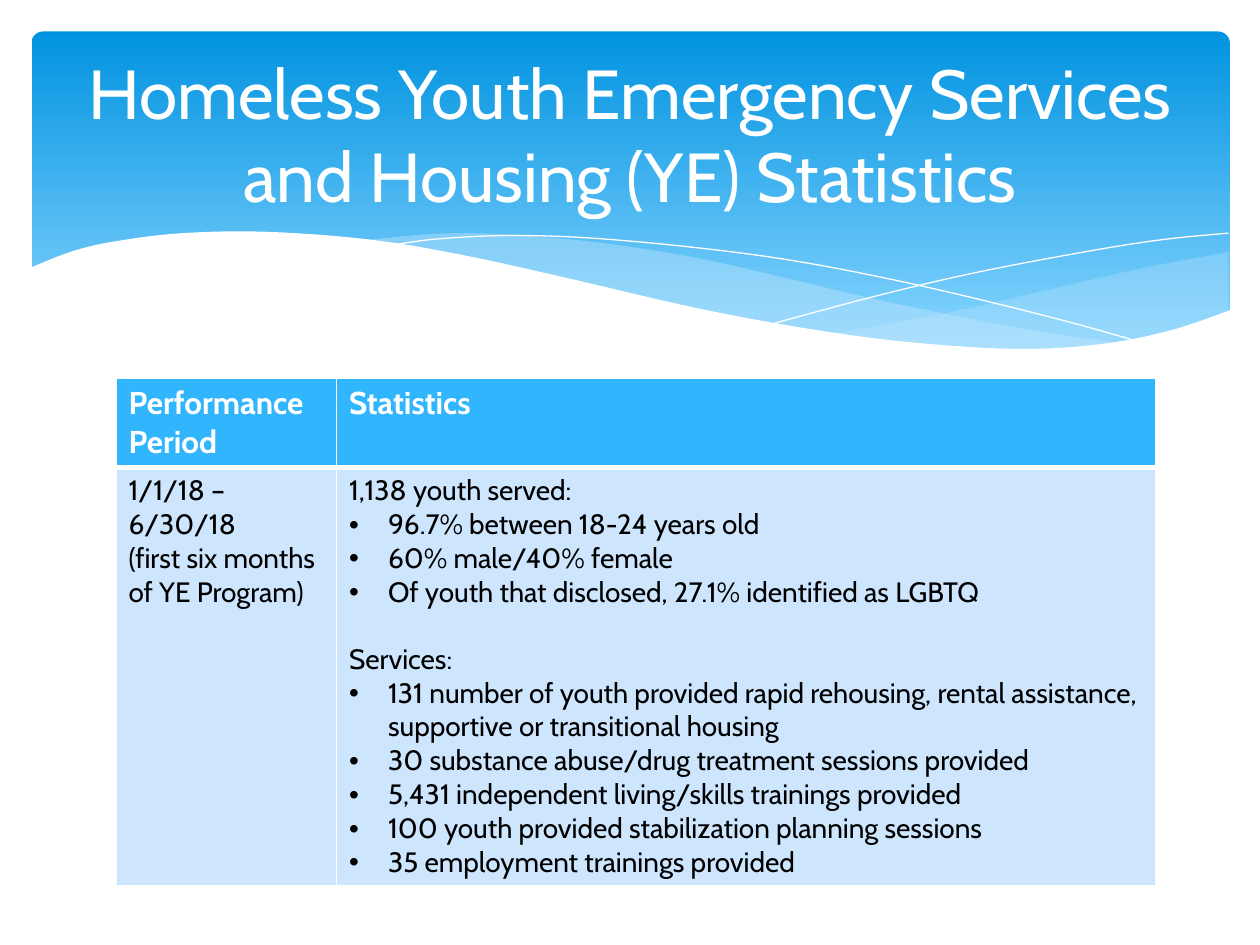
from dataclasses import dataclass

from lxml import etree
from pptx import Presentation
from pptx.dml.color import RGBColor
from pptx.enum.shapes import MSO_SHAPE
from pptx.enum.text import MSO_ANCHOR, MSO_AUTO_SIZE, PP_ALIGN
from pptx.oxml.ns import qn
from pptx.util import Pt

ROUNDED = MSO_SHAPE.ROUNDED_RECTANGLE
MIDDLE, CENTER = MSO_ANCHOR.MIDDLE, PP_ALIGN.CENTER
NO_AUTOFIT = MSO_AUTO_SIZE.NONE
PX = 9144  # EMU per px, 100 px to the inch
STEPS = 6  # straight pieces between two curve points
TITLE_ONLY = 5
FONT = "Cabin"
COLORS = {
    "white": "FFFFFF", "black": "000000", "sky_top": "0293E0", "sky_bottom": "83D3FE",
    "ripple": "C6E7FC", "header": "31B6FD", "body": "CEE5FE",
}


@dataclass
class Wave:
    """Smooth curves joined end to end; filled when it has a fill colour."""
    curves: list
    fill: str = ""
    alpha: int = 100


@dataclass
class Entry:
    text: str
    bullet: bool = False
    gap: int = 0  # points above


@dataclass
class CellStyle:
    fill: str
    color: str
    size: int
    bold: bool
    borders: dict


WAVES = [
    Wave([[(975, 200), (906, 213), (832, 230), (753, 248), (661, 265)],
          [(661, 265), (719, 271), (781, 277), (835, 277), (889, 272), (935, 262),
           (975, 247)]], "ripple", 29),
    Wave([[(893, 273), (807, 260), (706, 240), (629, 222), (569, 208), (514, 198),
           (442, 189), (361, 185), (286, 191)],
          [(286, 191), (362, 203), (449, 222), (566, 248), (665, 266), (748, 276),
           (818, 278), (893, 273)]], "ripple", 40),
    Wave([[(309, 195), (344, 190), (401, 187), (469, 189), (556, 197), (636, 208),
           (727, 226), (831, 251), (907, 272)]]),
    Wave([[(613, 257), (695, 235), (776, 216), (866, 199), (924, 190), (975, 185)]]),
    Wave([[(977, 246), (930, 262), (875, 273), (809, 277), (726, 272), (648, 262),
           (555, 245), (447, 220), (365, 202), (292, 190), (211, 184), (146, 185),
           (95, 191), (59, 199), (23, 213)],
          [(23, 329), (977, 329)]], "white"),
]

HEADER = CellStyle("header", "white", 18, True, {"L": 1, "R": 1, "T": 1, "B": 3})
BODY = CellStyle("body", "black", 16, False, {"L": 1, "R": 1, "T": 3, "B": 1})
COLUMN_WIDTHS = [175, 650]
ROW_HEIGHTS = [70, 331]
ROWS = [
    (HEADER, [[Entry("Performance Period")], [Entry("Statistics")]]),
    (BODY, [
        [Entry("1/1/18 – 6/30/18"), Entry("(first six months of YE Program)")],
        [
            Entry("1,138 youth served:"),
            Entry("96.7% between 18-24 years old", True),
            Entry("60% male/40% female", True),
            Entry("Of youth that disclosed, 27.1% identified as LGBTQ", True),
            Entry("Services:", gap=19),
            Entry("131 number of youth provided rapid rehousing, rental assistance, "
                  "supportive or transitional housing", True),
            Entry("30 substance abuse/drug treatment sessions provided", True),
            Entry("5,431 independent living/skills trainings provided", True),
            Entry("100 youth provided stabilization planning sessions", True),
            Entry("35 employment trainings provided", True),
        ],
    ]),
]


def rgb(name: str) -> RGBColor:
    return RGBColor.from_string(COLORS[name])


def smooth(points: list) -> list:
    """Catmull-Rom curve through the points, in EMU."""
    padded = [points[0], *points, points[-1]]
    result = []
    for a, b, c, d in zip(padded, padded[1:], padded[2:], padded[3:]):
        for step in range(STEPS):
            t = step / STEPS
            result.append(tuple(
                PX * (q + t * (r - p) / 2 + t**2 * (2 * p - 5 * q + 4 * r - s) / 2
                      + t**3 * (3 * q - p - 3 * r + s) / 2)
                for p, q, r, s in zip(a, b, c, d)))
    return result + [(points[-1][0] * PX, points[-1][1] * PX)]


def add_sky(page) -> None:
    sky = page.shapes.add_shape(ROUNDED, 25 * PX, 25 * PX, 951 * PX, 270 * PX)
    sky.shadow.inherit = False
    sky.adjustments[0] = 0.034
    sky.line.fill.background()
    sky.fill.gradient()
    sky.fill.gradient_angle = 270
    stops = zip(sky.fill.gradient_stops, [("sky_top", 0), ("sky_bottom", 0.9)])
    for stop, (color, position) in stops:
        stop.color.rgb = rgb(color)
        stop.position = position


def add_wave(page, wave: Wave) -> None:
    points = [point for curve in wave.curves for point in smooth(curve)]
    builder = page.shapes.build_freeform(*points[0], scale=1.0)
    builder.add_line_segments(points[1:], close=bool(wave.fill))
    shape = builder.convert_to_shape()
    shape.shadow.inherit = False
    if not wave.fill:
        shape.fill.background()
        shape.line.color.rgb = rgb("white")
        shape.line.width = Pt(0)
        return
    shape.line.fill.background()
    shape.fill.solid()
    shape.fill.fore_color.rgb = rgb(wave.fill)
    if wave.alpha < 100:
        color = shape.element.spPr.find(f"{qn('a:solidFill')}/{qn('a:srgbClr')}")
        etree.SubElement(color, qn("a:alpha"), val=str(wave.alpha * 1000))


def add_bullet(para) -> None:
    properties = para._p.get_or_add_pPr()
    properties.set("marL", str(31 * PX))
    properties.set("indent", str(-31 * PX))
    etree.SubElement(properties, qn("a:buFont"), typeface="Arial")
    etree.SubElement(properties, qn("a:buChar"), char="•")


def fill_cell(cell, entries: list, style: CellStyle) -> None:
    properties = cell._tc.get_or_add_tcPr()
    for side, width in style.borders.items():
        line = etree.SubElement(properties, qn(f"a:ln{side}"), w=str(Pt(width)))
        solid = etree.SubElement(line, qn("a:solidFill"))
        etree.SubElement(solid, qn("a:srgbClr"), val=COLORS["white"])
    cell.fill.solid()
    cell.fill.fore_color.rgb = rgb(style.fill)
    frame = cell.text_frame
    for index, entry in enumerate(entries):
        para = frame.add_paragraph() if index else frame.paragraphs[0]
        para.text = entry.text
        if entry.gap:
            para.space_before = Pt(entry.gap)
        if entry.bullet:
            add_bullet(para)
        para.font.name, para.font.size = FONT, Pt(style.size)
        para.font.bold = style.bold
        para.font.color.rgb = rgb(style.color)


def add_statistics(page) -> None:
    table = page.shapes.add_table(
        len(ROWS), len(COLUMN_WIDTHS), 92 * PX, 300 * PX,
        sum(COLUMN_WIDTHS) * PX, sum(ROW_HEIGHTS) * PX).table
    for column, width in zip(table.columns, COLUMN_WIDTHS):
        column.width = width * PX
    for row, height, (style, cells) in zip(table.rows, ROW_HEIGHTS, ROWS):
        row.height = height * PX
        for cell, entries in zip(row.cells, cells):
            fill_cell(cell, entries, style)


def set_title(page, text: str) -> None:
    title = page.shapes.title
    title.left, title.top, title.width, title.height = (
        50 * PX, 37 * PX, 900 * PX, 137 * PX)
    frame = title.text_frame
    frame.word_wrap, frame.auto_size = True, NO_AUTOFIT
    frame.vertical_anchor = MIDDLE
    para = frame.paragraphs[0]
    para.text, para.alignment = text, CENTER
    para.font.name, para.font.size = FONT, Pt(39.6)
    para.font.color.rgb = rgb("white")
    # Bring the title in front of the backdrop
    title.element.getparent().append(title.element)


def main() -> None:
    deck = Presentation()
    deck.slide_width, deck.slide_height = 1000 * PX, 750 * PX
    page = deck.slides.add_slide(deck.slide_layouts[TITLE_ONLY])
    # Backdrop
    add_sky(page)
    for wave in WAVES:
        add_wave(page, wave)
    # Content
    add_statistics(page)
    set_title(page, "Homeless Youth Emergency Services and Housing (YE) Statistics")
    deck.save("out.pptx")


if __name__ == "__main__":
    main()
